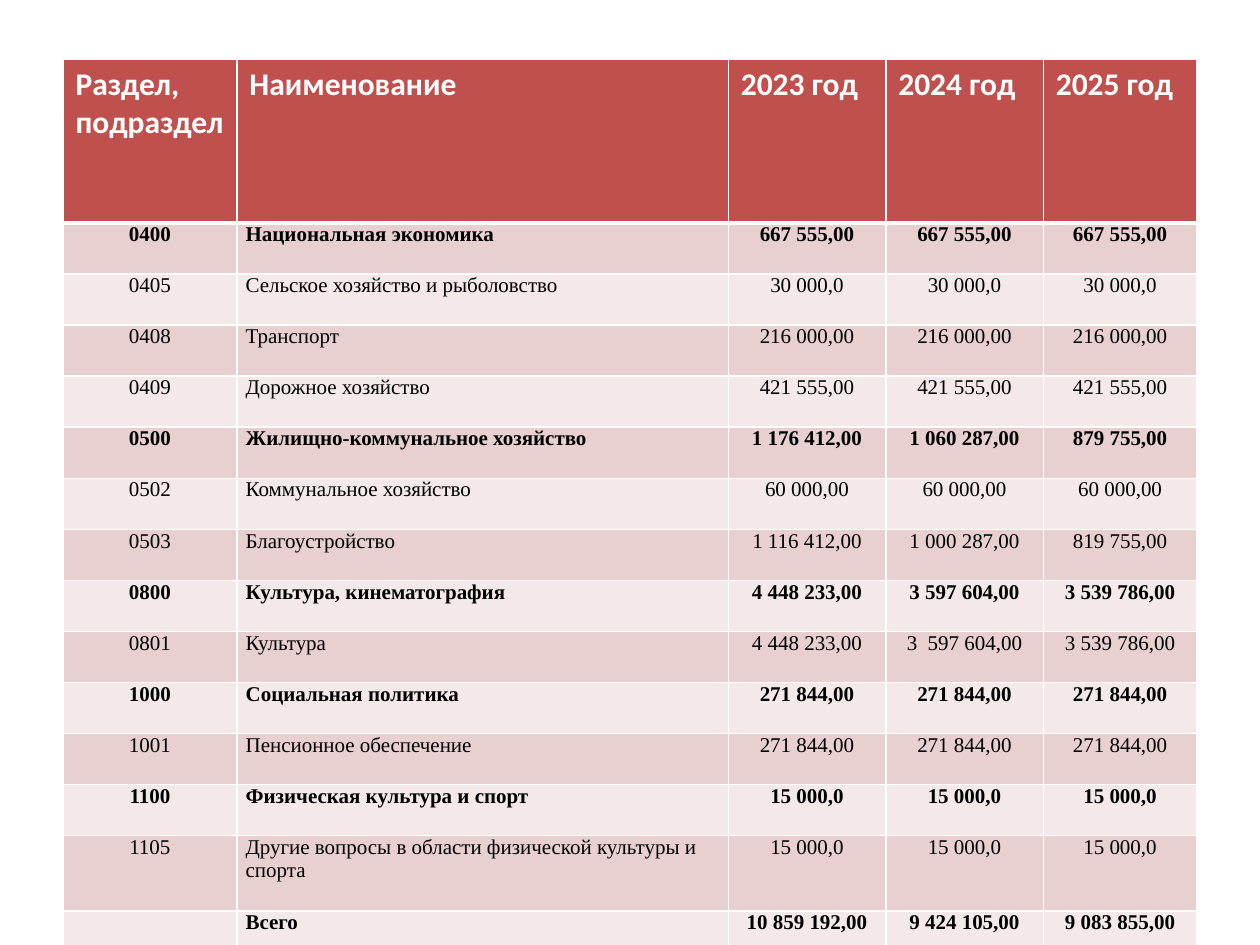
from lxml.etree import SubElement
from pptx import Presentation
from pptx.dml.color import RGBColor
from pptx.enum.text import PP_ALIGN
from pptx.oxml.ns import qn
from pptx.util import Inches, Pt

WHITE = RGBColor(0xFF, 0xFF, 0xFF)
BLACK = RGBColor(0x00, 0x00, 0x00)
RED = RGBColor(0xC0, 0x50, 0x4D)
ROSE = RGBColor(0xE8, 0xD0, 0xD0)
PALE = RGBColor(0xF4, 0xE9, 0xE9)

COLS = [1.38, 3.9, 1.25, 1.25, 1.22]
HEAD = ["Раздел, подраздел", "Наименование", "2023 год", "2024 год", "2025 год"]
ROWS = [
    ("0400", "Национальная экономика", ["667 555,00"]),
    ("0405", "Сельское хозяйство и рыболовство", ["30 000,0"]),
    ("0408", "Транспорт", ["216 000,00"]),
    ("0409", "Дорожное хозяйство", ["421 555,00"]),
    ("0500", "Жилищно-коммунальное хозяйство",
     ["1 176 412,00", "1 060 287,00", "879 755,00"]),
    ("0502", "Коммунальное хозяйство", ["60 000,00"]),
    ("0503", "Благоустройство", ["1 116 412,00", "1 000 287,00", "819 755,00"]),
    ("0800", "Культура, кинематография",
     ["4 448 233,00", "3 597 604,00", "3 539 786,00"]),
    ("0801", "Культура", ["4 448 233,00", "3  597 604,00", "3 539 786,00"]),
    ("1000", "Социальная политика", ["271 844,00"]),
    ("1001", "Пенсионное обеспечение", ["271 844,00"]),
    ("1100", "Физическая культура и спорт", ["15 000,0"]),
    ("1105", "Другие вопросы в области физической культуры и спорта",
     ["15 000,0"]),
    ("", "Всего", ["10 859 192,00", "9 424 105,00", "9 083 855,00"]),
]
HEAD_HIGH = 1.3
TALL = 0.6
TALL_ROW = 13


def set_edges(cell, top, bottom):
    props = cell._tc.get_or_add_tcPr()
    for side, width in (("L", 1), ("R", 1), ("T", top), ("B", bottom)):
        line = SubElement(props, qn(f"a:ln{side}"), w=str(Pt(width)))
        fill = SubElement(line, qn("a:solidFill"))
        SubElement(fill, qn("a:srgbClr"), val=str(WHITE))


def fill_cell(cell, text, color, font, size, ink, bold):
    cell.fill.solid()
    cell.fill.fore_color.rgb = color
    cell.text = text
    para = cell.text_frame.paragraphs[0]
    para.font.name = font
    para.font.size = Pt(size)
    para.font.color.rgb = ink
    para.font.bold = bold
    return para


def add_budget(slide, left, top, width, height):
    frame = slide.shapes.add_table(
        len(ROWS) + 1, len(COLS),
        Inches(left), Inches(top), Inches(width), Inches(height))
    table = frame.table
    for col, part in zip(table.columns, COLS):
        col.width = Inches(width * part / sum(COLS))
    step = (height - HEAD_HIGH - TALL) / (len(ROWS) - 1)
    for i, row in enumerate(table.rows):
        row.height = Inches({0: HEAD_HIGH, TALL_ROW: TALL}.get(i, step))

    for cell, text in zip(table.rows[0].cells, HEAD):
        set_edges(cell, 1, 3)
        fill_cell(cell, text, RED, "Calibri", 18, WHITE, True)

    for i, (code, name, sums) in enumerate(ROWS, 1):
        color = ROSE if i % 2 else PALE
        bold = not code or code.endswith("00")
        texts = [code, name] + (sums * 3)[:3]
        for j, text in enumerate(texts):
            cell = table.cell(i, j)
            set_edges(cell, 3 if i == 1 else 1, 1)
            cell.margin_left = cell.margin_right = Inches(0.07)
            cell.margin_top = cell.margin_bottom = 0
            para = fill_cell(cell, text, color, "Times New Roman", 12, BLACK, bold)
            para.alignment = PP_ALIGN.LEFT if j == 1 else PP_ALIGN.CENTER


def main():
    deck = Presentation()
    deck.slide_width = Inches(10)
    deck.slide_height = Inches(7.5)
    slide = deck.slides.add_slide(deck.slide_layouts[6])
    add_budget(slide, 0.5, 0.47, 9, 7.17)
    deck.save("out.pptx")


if __name__ == "__main__":
    main()
